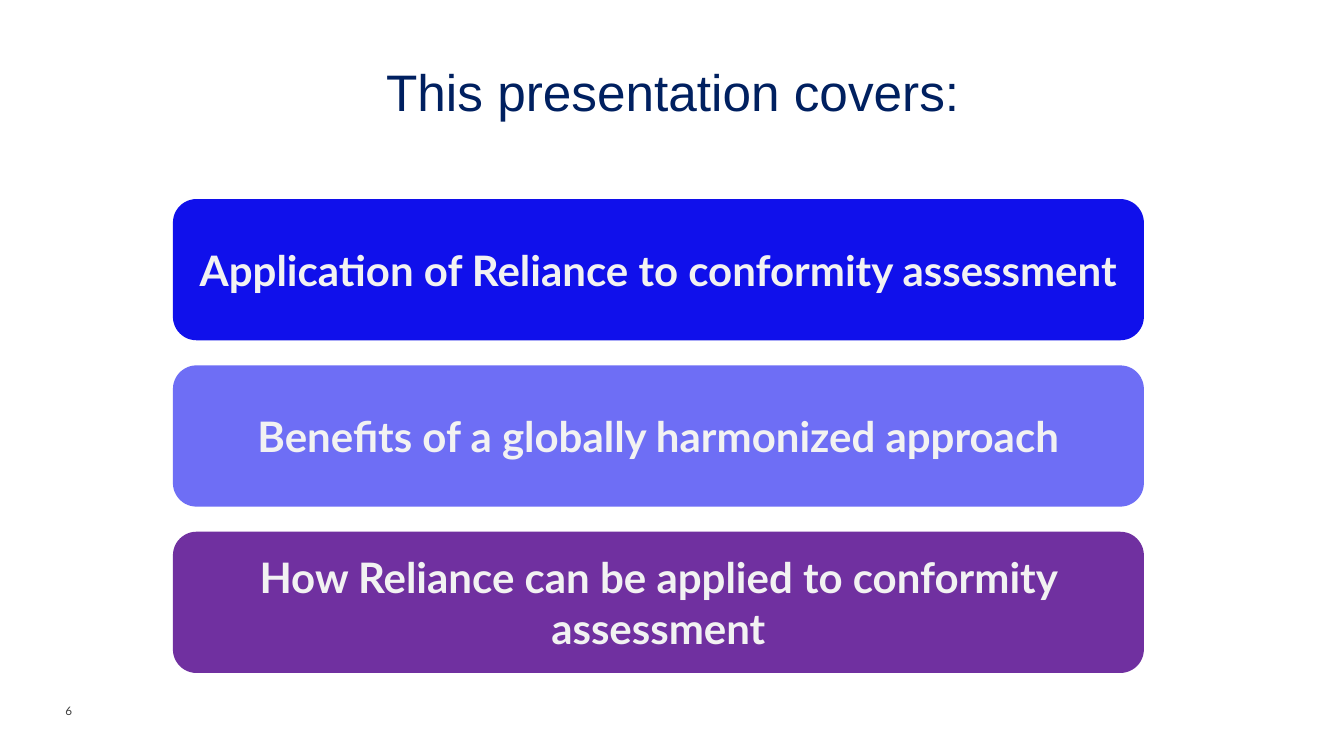
import pptx
import pptx.util
import pptx.dml.color
import pptx.enum.shapes
import pptx.enum.text

Cm = pptx.util.Cm
Pt = pptx.util.Pt
RGBColor = pptx.dml.color.RGBColor
Anchor = pptx.enum.text.MSO_ANCHOR
Align = pptx.enum.text.PP_ALIGN

NAVY = RGBColor(0x00, 0x20, 0x60)
BLUE = RGBColor(0x10, 0x10, 0xEB)
PERIWINKLE = RGBColor(0x6E, 0x6E, 0xF5)
PURPLE = RGBColor(0x70, 0x30, 0xA0)
PALE = RGBColor(0xF2, 0xF2, 0xF2)
GREY = RGBColor(0x3C, 0x3C, 0x3C)

# Content
TITLE = "This presentation covers:"
TOPICS = [
    ("Application of Reliance to conformity assessment", BLUE),
    ("Benefits of a globally harmonized approach", PERIWINKLE),
    ("How Reliance can be applied to conformity assessment", PURPLE),
]
PAGE_NUMBER = "6"

# Topic bars, in cm
BAR_LEFT, BAR_TOP = 5.23, 6.02
BAR_WIDTH, BAR_HEIGHT = 29.36, 4.27
BAR_STEP = 5.03


def write(shape, text, font_name, size, color, align, anchor, bold=False):
    frame = shape.text_frame
    frame.word_wrap = True
    frame.vertical_anchor = anchor
    frame.text = text
    para = frame.paragraphs[0]
    para.alignment = align
    para.font.name = font_name
    para.font.size = Pt(size)
    para.font.bold = bold
    para.font.color.rgb = color


def main():
    deck = pptx.Presentation()
    deck.slide_width, deck.slide_height = Cm(40.64), Cm(22.86)
    page = deck.slides.add_slide(deck.slide_layouts[5])

    # Title
    title = page.shapes.title
    title.left, title.top = Cm(1.75), Cm(1.68)
    title.width, title.height = Cm(37.21), Cm(2.13)
    write(title, TITLE, "Arial", 44, NAVY, Align.CENTER, Anchor.MIDDLE)

    # Topic bars
    for index, (topic, color) in enumerate(TOPICS):
        bar = page.shapes.add_shape(
            pptx.enum.shapes.MSO_SHAPE.ROUNDED_RECTANGLE,
            Cm(BAR_LEFT), Cm(BAR_TOP + index * BAR_STEP),
            Cm(BAR_WIDTH), Cm(BAR_HEIGHT))
        bar.shadow.inherit = False
        bar.fill.solid()
        bar.fill.fore_color.rgb = color
        bar.line.fill.background()
        write(bar, topic, "Lato", 36, PALE, Align.CENTER, Anchor.MIDDLE, bold=True)

    # Page number
    number = page.shapes.add_textbox(Cm(1.98), Cm(21.29), Cm(0.84), Cm(0.43))
    frame = number.text_frame
    frame.margin_left = frame.margin_right = 0
    frame.margin_top = frame.margin_bottom = 0
    write(number, PAGE_NUMBER, "Lato", 10, GREY, Align.LEFT, Anchor.BOTTOM)

    deck.save("out.pptx")


if __name__ == "__main__":
    main()
